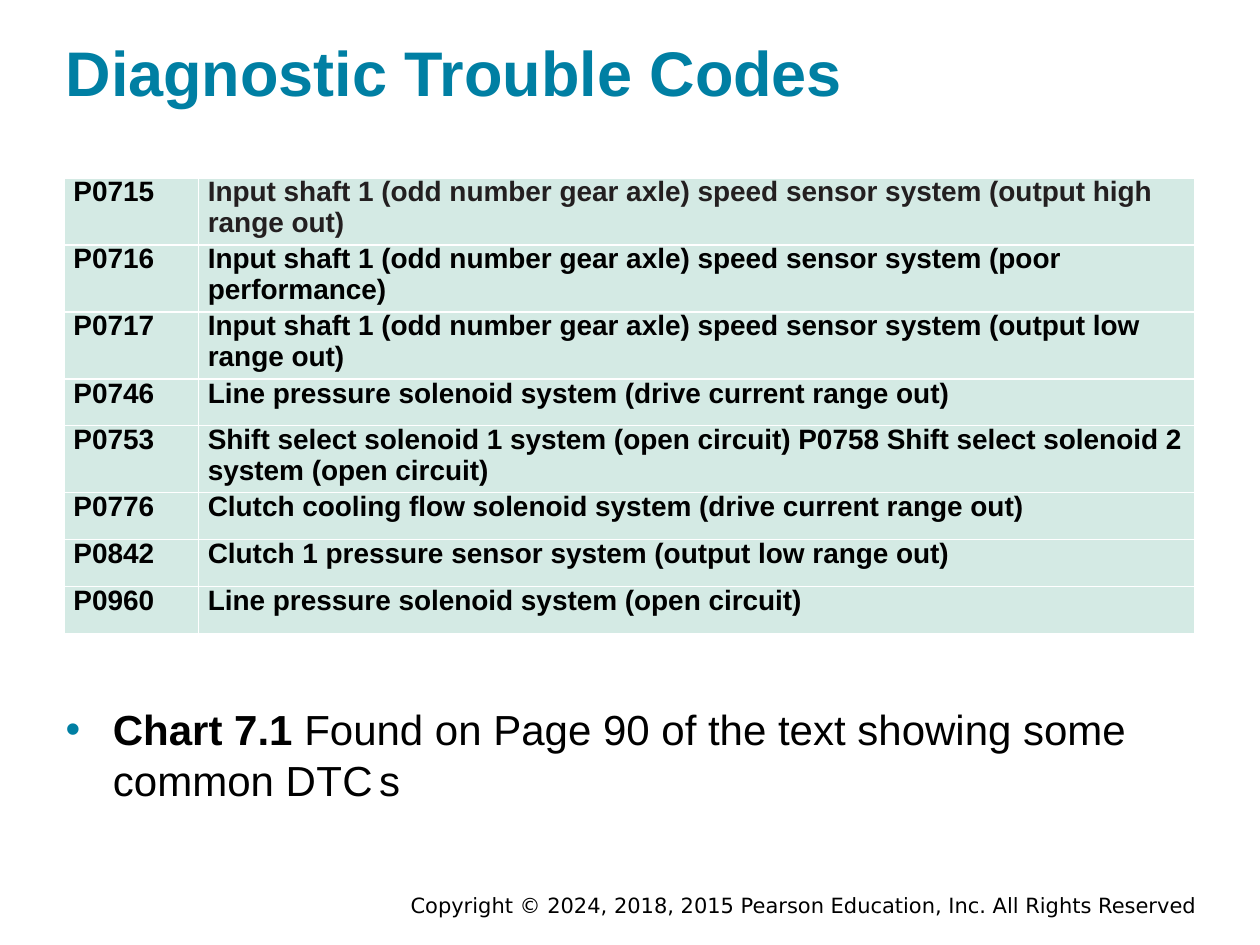
from dataclasses import dataclass

from lxml import etree
from pptx import Presentation
from pptx.dml.color import RGBColor as RGB
from pptx.enum.text import MSO_ANCHOR as ANCHOR, PP_ALIGN as ALIGN
from pptx.oxml.ns import qn
from pptx.util import Pt


@dataclass(frozen=True)
class Theme:
    accent: RGB = RGB(0x00, 0x7F, 0xA3)
    ink: RGB = RGB(0, 0, 0)
    soft_ink: RGB = RGB(0x23, 0x1F, 0x20)
    cell: RGB = RGB(0xD4, 0xEA, 0xE4)
    font: str = "Arial"
    footer_font: str = "DejaVu Sans"
    title: int = 36
    body: int = 24
    table: int = 16
    footer: int = 12


T = Theme()


def add_box(x, y, w, h):
    tf = s.shapes.add_textbox(Pt(x), Pt(y), Pt(w), Pt(h)).text_frame
    tf.word_wrap = True
    tf.vertical_anchor = ANCHOR.MIDDLE
    tf.margin_left = tf.margin_right = 0
    tf.margin_top = tf.margin_bottom = Pt(1.5)
    return tf.paragraphs[0]


def style(r, size, color=T.ink, bold=False, font=T.font):
    r.font.name = font
    r.font.size = Pt(size)
    r.font.bold = bold
    r.font.color.rgb = color


prs = Presentation()
prs.slide_width, prs.slide_height = Pt(720), Pt(540)
s = prs.slides.add_slide(prs.slide_layouts[6])

p = add_box(165, 508.3, 519, 17.3)
p.text = "Copyright © 2024, 2018, 2015 Pearson Education, Inc. All Rights Reserved"
p.alignment = ALIGN.RIGHT
style(p.runs[0], T.footer, font=T.footer_font)

p = add_box(37.5, 17.3, 648, 46.8)
p.text = "Diagnostic Trouble Codes"
style(p.runs[0], T.title, T.accent, True)

SENSOR = "Input shaft 1 (odd number gear axle) speed sensor system "
ONE_LINE, TWO_LINES = 26.8, 38.3
codes = [
    ("P0715", SENSOR + "(output high range out)", TWO_LINES),
    ("P0716", SENSOR + "(poor performance)", TWO_LINES),
    ("P0717", SENSOR + "(output low range out)", TWO_LINES),
    ("P0746", "Line pressure solenoid system (drive current range out)", ONE_LINE),
    ("P0753", "Shift select solenoid 1 system (open circuit) "
              "P0758 Shift select solenoid 2 system (open circuit)", TWO_LINES),
    ("P0776", "Clutch cooling flow solenoid system (drive current range out)", ONE_LINE),
    ("P0842", "Clutch 1 pressure sensor system (output low range out)", ONE_LINE),
    ("P0960", "Line pressure solenoid system (open circuit)", ONE_LINE),
]
height = sum(h for _, _, h in codes)
table = s.shapes.add_table(len(codes), 2, Pt(36.6), Pt(101.6), Pt(646), Pt(height)).table
table.first_row = table.horz_banding = False
for col, width in zip(table.columns, (76.8, 569.2)):
    col.width = Pt(width)
for i, (code, meaning, h) in enumerate(codes):
    table.rows[i].height = Pt(h)
    for j, text in enumerate((code, meaning)):
        cell = table.cell(i, j)
        cell.fill.solid()
        cell.fill.fore_color.rgb = T.cell
        cell.margin_left = cell.margin_right = Pt(5.4)
        cell.margin_top = cell.margin_bottom = 0
        p = cell.text_frame.paragraphs[0]
        p.text = text
        p.line_spacing = 0.97
        style(p.runs[0], T.table, T.soft_ink if (i, j) == (0, 1) else T.ink, True)

p = add_box(37.5, 400.3, 646, 61.2)
pPr = p._p.get_or_add_pPr()
pPr.set("marL", str(Pt(27)))
pPr.set("indent", str(-Pt(27)))
color = etree.SubElement(pPr, qn("a:buClr"))
etree.SubElement(color, qn("a:srgbClr"), val=str(T.accent))
etree.SubElement(pPr, qn("a:buFont"), typeface=T.font)
etree.SubElement(pPr, qn("a:buChar"), char="•")
for text, bold, spacing in [
    ("Chart 7.1", True, 0),
    (" Found on Page 90 of the text showing some common ", False, 0),
    ("D T C ", False, -300),
    ("s", False, 0),
]:
    r = p.add_run()
    r.text = text
    style(r, T.body, bold=bold)
    if spacing:
        r._r.get_or_add_rPr().set("spc", str(spacing))

prs.save("out.pptx")
